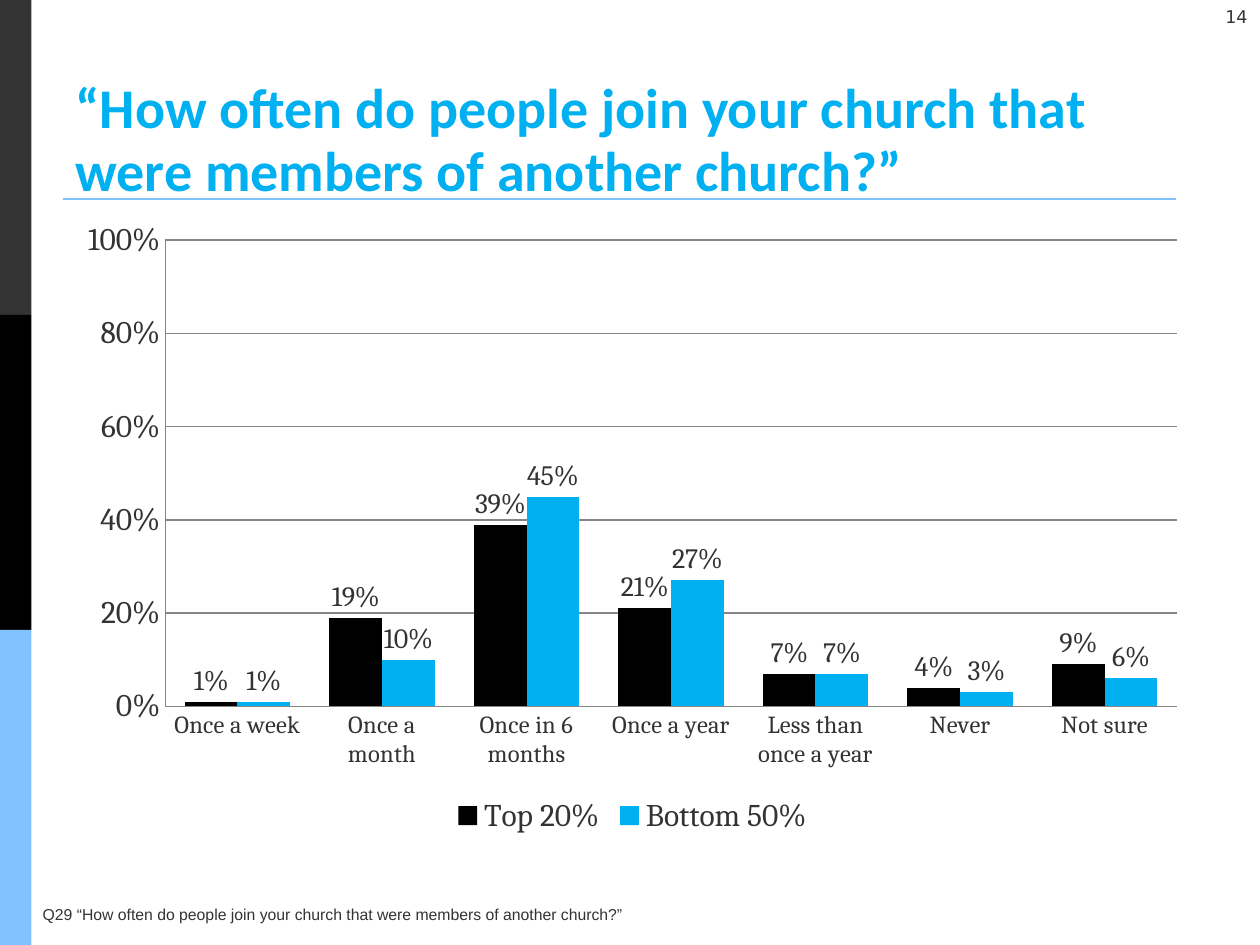
from pptx import Presentation
from pptx.chart.data import CategoryChartData
from pptx.dml.color import RGBColor
from pptx.enum.chart import (XL_CHART_TYPE, XL_LABEL_POSITION,
                             XL_LEGEND_POSITION, XL_TICK_MARK)
from pptx.enum.shapes import MSO_CONNECTOR, MSO_SHAPE
from pptx.enum.text import MSO_ANCHOR, PP_ALIGN
from pptx.oxml.ns import qn
from pptx.util import Pt
from lxml import etree

PX = 9144  # EMU per px, 100 px to the inch
COLORS = {"text": "333333", "black": "000000", "rule": "81C3FF",
          "accent": "00B0F0", "grid": "868686"}
COLUMN = XL_CHART_TYPE.COLUMN_CLUSTERED
OUTSIDE = XL_LABEL_POSITION.OUTSIDE_END
BELOW = XL_LEGEND_POSITION.BOTTOM
NO_TICK = XL_TICK_MARK.NONE
RECT, LINE = MSO_SHAPE.RECTANGLE, MSO_CONNECTOR.STRAIGHT
TOP, BOTTOM = MSO_ANCHOR.TOP, MSO_ANCHOR.BOTTOM
LEFT, RIGHT = PP_ALIGN.LEFT, PP_ALIGN.RIGHT

QUESTION = ("“How often do people join your church that were members "
            "of another church?”")
CATS = ["Once a week", "Once a month", "Once in 6 months", "Once a year",
        "Less than once a year", "Never", "Not sure"]
SERIES = [("Top 20%", "black", [0.01, 0.19, 0.39, 0.21, 0.07, 0.04, 0.09]),
          ("Bottom 50%", "accent", [0.01, 0.1, 0.45, 0.27, 0.07, 0.03, 0.06])]


def rgb(key):
    return RGBColor.from_string(COLORS[key])


def emu(box):
    return [n * PX for n in box]


def style(font, name, size, key="text", bold=False):
    font.name, font.size, font.bold = name, Pt(size), bold
    font.color.rgb = rgb(key)


def add_text(slide, box, text, name, size, key="text", bold=False,
             align=LEFT, anchor=TOP, lead=None):
    frame = slide.shapes.add_textbox(*emu(box)).text_frame
    frame.word_wrap = True
    frame.vertical_anchor = anchor
    frame.text = text
    para = frame.paragraphs[0]
    para.alignment = align
    if lead:
        para.line_spacing = Pt(lead)
    style(para.runs[0].font, name, size, key, bold)


def add_band(slide, box):
    """Side band of equal blocks stacked down the box."""
    left, top, width, height = box
    keys = ["text", "black", "rule"]
    step = height // len(keys)
    for i, key in enumerate(keys):
        block = slide.shapes.add_shape(
            RECT, *emu((left, top + i * step, width, step)))
        block.shadow.inherit = False
        block.fill.solid()
        block.fill.fore_color.rgb = rgb(key)
        block.line.fill.background()


def add_title(slide, box):
    """Heading with a rule just above the foot of its box."""
    left, top, width, height = box
    y = top + height - 8
    rule = slide.shapes.add_connector(
        LINE, *emu((left, y, left + width + 1, y)))
    rule.line.color.rgb = rgb("rule")
    rule.line.width = Pt(1.5)
    etree.SubElement(rule._element.spPr, qn("a:effectLst"))
    add_text(slide, box, QUESTION, "Calibri", 32, "accent", True,
             anchor=BOTTOM, lead=36)


def add_bars(slide, box):
    """Column chart of the answers."""
    data = CategoryChartData(number_format="0%")
    data.categories = CATS
    for name, _, vals in SERIES:
        data.add_series(name, vals)
    chart = slide.shapes.add_chart(COLUMN, *emu(box), data).chart
    style(chart.font, "Cambria", 18)
    chart.has_title = False
    chart.has_legend = True
    chart.legend.position = BELOW
    chart.legend.include_in_layout = False

    # Axes
    cat, val = chart.category_axis, chart.value_axis
    for axis in (cat, val):
        axis.major_tick_mark = axis.minor_tick_mark = NO_TICK
        axis.format.line.color.rgb = rgb("grid")
    style(cat.tick_labels.font, "Cambria", 14)
    val.minimum_scale, val.maximum_scale, val.major_unit = 0, 1, 0.2
    val.major_gridlines.format.line.color.rgb = rgb("grid")
    val.tick_labels.number_format = "0%"
    val.tick_labels.number_format_is_linked = False

    # Columns and their labels
    plot = chart.plots[0]
    plot.gap_width, plot.overlap = 75, 0
    plot.vary_by_categories = False
    for series, (_, key, _) in zip(plot.series, SERIES):
        series.format.fill.solid()
        series.format.fill.fore_color.rgb = rgb(key)
        labels = series.data_labels
        labels.show_value = True
        labels.position = OUTSIDE
        labels.number_format = "0%"
        labels.number_format_is_linked = False
        style(labels.font, "Cambria", 16)


def main():
    deck = Presentation()
    deck.slide_width, deck.slide_height = emu((1000, 750))
    slide = deck.slides.add_slide(deck.slide_layouts[6])
    add_band(slide, (0, 0, 25, 750))
    add_text(slide, (950, 0, 50, 33), "14", "DejaVu Sans", 10, align=RIGHT)
    add_text(slide, (24, 713, 748, 25), "Q29 " + QUESTION, "Arial", 9)
    add_bars(slide, (52, 166, 900, 501))
    add_title(slide, (50, 41, 882, 125))
    deck.save("out.pptx")


if __name__ == "__main__":
    main()
